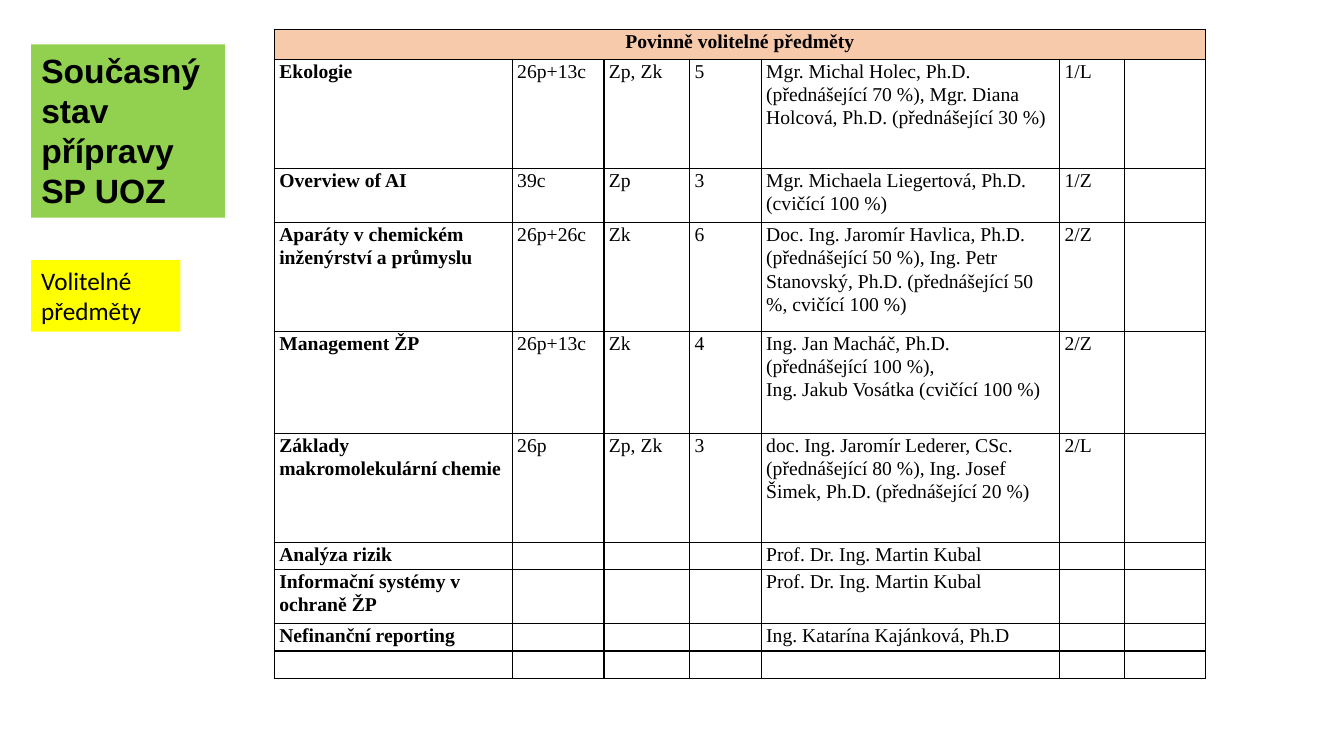
from lxml import etree
from pptx import Presentation
from pptx.dml.color import RGBColor
from pptx.enum import shapes, text
from pptx.oxml.ns import qn
from pptx.util import Inches, Pt

BLACK = RGBColor(0x00, 0x00, 0x00)
GREEN = RGBColor(0x92, 0xD0, 0x50)
YELLOW = RGBColor(0xFF, 0xFF, 0x00)
PEACH = RGBColor(0xF7, 0xCA, 0xAC)

TABLE_FONT = "Times New Roman"
TABLE_SIZE = 14
COLUMN_WIDTHS = [2.36, 0.91, 0.85, 0.71, 2.96, 0.64, 0.81]
ROW_HEIGHTS = [0.3, 1.08, 0.54, 1.08, 1.01, 1.08, 0.27, 0.54, 0.27, 0.27]
HEADING = "Povinně volitelné předměty"
# Subject, hours, completion, credits, teachers, year/term, note
SUBJECTS = [
    ["Ekologie", "26p+13c", "Zp, Zk", "5",
     "Mgr. Michal Holec, Ph.D. (přednášející 70 %), Mgr. Diana Holcová, "
     "Ph.D. (přednášející 30 %)", "1/L", ""],
    ["Overview of AI", "39c", "Zp", "3",
     "Mgr. Michaela Liegertová, Ph.D. (cvičící 100 %)", "1/Z", ""],
    ["Aparáty v chemickém inženýrství a průmyslu", "26p+26c", "Zk", "6",
     "Doc. Ing. Jaromír Havlica, Ph.D. (přednášející 50 %), Ing. Petr "
     "Stanovský, Ph.D. (přednášející 50 %, cvičící 100 %)", "2/Z", ""],
    ["Management ŽP", "26p+13c", "Zk", "4",
     "Ing. Jan Macháč, Ph.D. (přednášející 100 %), \n"
     "Ing. Jakub Vosátka (cvičící 100 %)", "2/Z", ""],
    ["Základy makromolekulární chemie", "26p", "Zp, Zk", "3",
     "doc. Ing. Jaromír Lederer, CSc. (přednášející 80 %), Ing. Josef Šimek, "
     "Ph.D. (přednášející 20 %)", "2/L", ""],
    ["Analýza rizik", "", "", "", "Prof. Dr. Ing. Martin Kubal", "", ""],
    ["Informační systémy v ochraně ŽP", "", "", "",
     "Prof. Dr. Ing. Martin Kubal", "", ""],
    ["Nefinanční reporting", "", "", "", "Ing. Katarína Kajánková, Ph.D", "", ""],
    [""] * 7,
]


def add_span(para, words, font, size, bold=False):
    span = para.add_run()
    span.text = words
    span.font.name = font
    span.font.size = Pt(size)
    span.font.bold = bold
    span.font.color.rgb = BLACK


def fill_label(shape, box, color, lines, font, size, bold=False):
    """Place a coloured label and write one paragraph per line."""
    shape.left, shape.top, shape.width, shape.height = map(Inches, box)
    shape.fill.solid()
    shape.fill.fore_color.rgb = color
    shape.line.fill.background()
    frame = shape.text_frame
    frame.word_wrap = True
    frame.auto_size = text.MSO_AUTO_SIZE.NONE
    frame.vertical_anchor = text.MSO_ANCHOR.TOP
    for index, line in enumerate(lines):
        para = frame.add_paragraph() if index else frame.paragraphs[0]
        para.alignment = text.PP_ALIGN.LEFT
        add_span(para, line, font, size, bold)


def add_borders(cell):
    properties = cell._tc.get_or_add_tcPr()
    for side in ("a:lnL", "a:lnR", "a:lnT", "a:lnB"):
        line = etree.SubElement(properties, qn(side), w=str(Pt(1)))
        fill = etree.SubElement(line, qn("a:solidFill"))
        etree.SubElement(fill, qn("a:srgbClr"), val=str(BLACK))


def write_cell(cell, words, bold, alignment):
    para = cell.text_frame.paragraphs[0]
    para.alignment = alignment
    para.line_spacing = 1.07
    for index, line in enumerate(words.split("\n")):
        if index:
            para.add_line_break()
        if line:
            add_span(para, line, TABLE_FONT, TABLE_SIZE, bold)
    # Keeps empty cells from stretching their row
    etree.SubElement(para._p, qn("a:endParaRPr"), sz=str(TABLE_SIZE * 100))


def add_subject_table(page, left, top):
    frame = page.shapes.add_table(
        len(ROW_HEIGHTS), len(COLUMN_WIDTHS), Inches(left), Inches(top),
        Inches(sum(COLUMN_WIDTHS)), Inches(sum(ROW_HEIGHTS)))
    table = frame.table
    table.first_row = table.horz_banding = False
    for column, width in zip(table.columns, COLUMN_WIDTHS):
        column.width = Inches(width)
    for row, height in zip(table.rows, ROW_HEIGHTS):
        row.height = Inches(height)
    for cell in table.iter_cells():
        cell.margin_left = cell.margin_right = Inches(0.05)
        cell.margin_top = cell.margin_bottom = 0
        add_borders(cell)
        cell.fill.background()

    heading = table.cell(0, 0)
    heading.merge(table.cell(0, len(COLUMN_WIDTHS) - 1))
    heading.fill.solid()
    heading.fill.fore_color.rgb = PEACH
    write_cell(heading, HEADING, True, text.PP_ALIGN.CENTER)
    for row, subject in enumerate(SUBJECTS, 1):
        for column, words in enumerate(subject):
            write_cell(table.cell(row, column), words, column == 0,
                       text.PP_ALIGN.LEFT)


def main():
    deck = Presentation()
    deck.slide_width, deck.slide_height = Inches(13.33), Inches(7.5)
    page = deck.slides.add_slide(deck.slide_layouts[5])
    fill_label(page.shapes.title, (0.31, 0.44, 1.92, 1.72), GREEN,
               ["Současný stav přípravy SP UOZ"], "Arial", 24, True)
    label = page.shapes.add_shape(shapes.MSO_SHAPE.RECTANGLE, 0, 0, 0, 0)
    label.shadow.inherit = False
    fill_label(label, (0.31, 2.58, 1.48, 0.71), YELLOW,
               ["Volitelné", "předměty"], "Calibri", 18)
    add_subject_table(page, 2.72, 0.29)
    deck.save("out.pptx")


if __name__ == "__main__":
    main()
